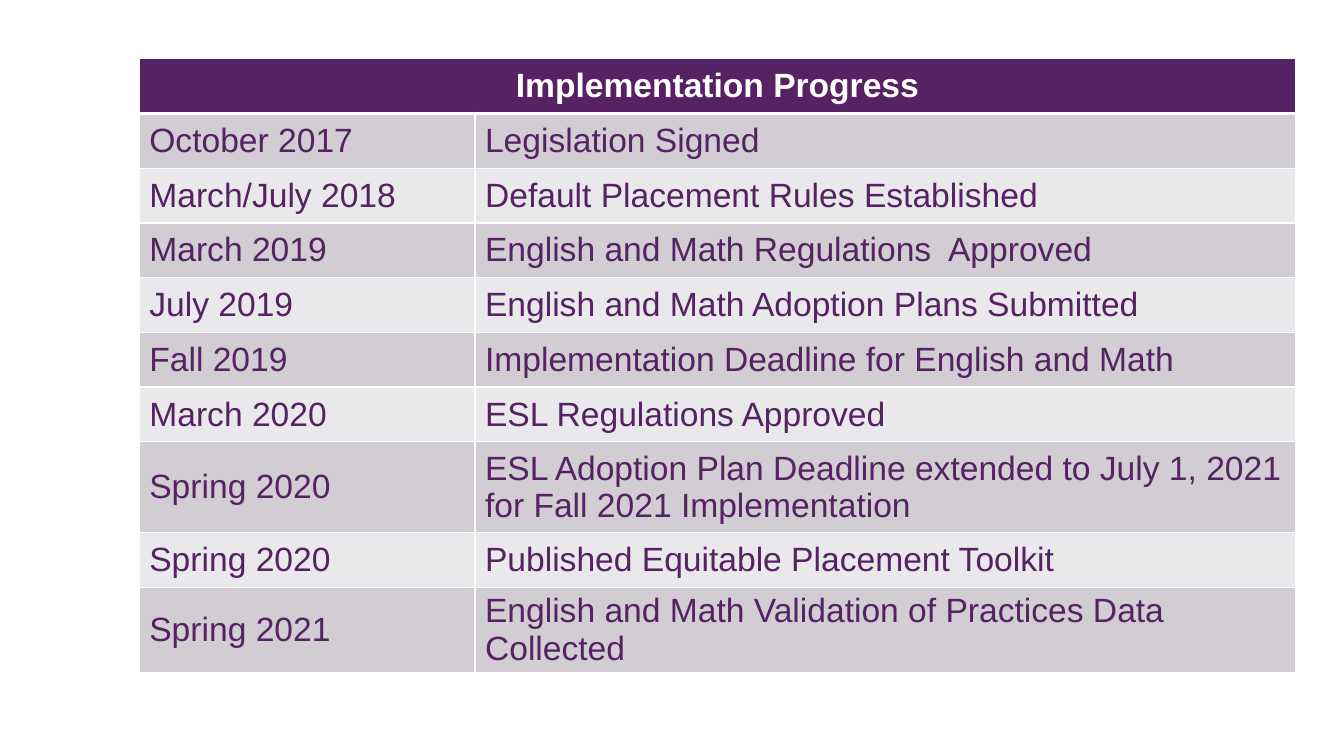
from dataclasses import dataclass

from lxml.etree import SubElement
from pptx import Presentation
from pptx.dml.color import RGBColor as RGB
from pptx.enum.text import MSO_ANCHOR as Anchor, PP_ALIGN as Align
from pptx.oxml.ns import qn
from pptx.util import Cm, Pt

# Content
HEADING = "Implementation Progress"
MILESTONES = [
    ("October 2017", "Legislation Signed"),
    ("March/July 2018", "Default Placement Rules Established"),
    ("March 2019", "English and Math Regulations  Approved"),
    ("July 2019", "English and Math Adoption Plans Submitted"),
    ("Fall 2019", "Implementation Deadline for English and Math"),
    ("March 2020", "ESL Regulations Approved"),
    ("Spring 2020", "ESL Adoption Plan Deadline extended to July 1, 2021 "
                    "for Fall 2021 Implementation"),
    ("Spring 2020", "Published Equitable Placement Toolkit"),
    ("Spring 2021", "English and Math Validation of Practices Data Collected"),
]


@dataclass(frozen=True)
class Theme:
    font: str = "Arial"
    size: int = 24
    purple: str = "562263"
    white: str = "FFFFFF"
    bands: tuple = ("D1CDD3", "E9E8EA")
    rule: int = 1
    header_rule: int = 3


THEME = Theme()

# Layout in centimetres
LEFT, TOP = 3.51, 1.48
COL_WIDTHS = (8.46, 20.68)
ROW_HEIGHT = 1.38
TALL_ROWS = {7: 2.29, 9: 2.14}


def set_borders(cell, bottom, top):
    """Draw white rules on the four sides of a cell."""
    tcPr = cell._tc.get_or_add_tcPr()
    widths = {"lnL": THEME.rule, "lnR": THEME.rule, "lnT": top, "lnB": bottom}
    for side, width in widths.items():
        ln = SubElement(tcPr, qn(f"a:{side}"), w=str(Pt(width)))
        fill = SubElement(ln, qn("a:solidFill"))
        SubElement(fill, qn("a:srgbClr"), val=THEME.white)


def format_cell(cell, text, row):
    """Write one cell in the header or band style of its row."""
    header = row == 0
    set_borders(cell,
                bottom=THEME.header_rule if header else THEME.rule,
                top=THEME.header_rule if row == 1 else THEME.rule)
    fill = THEME.purple if header else THEME.bands[(row - 1) % 2]
    cell.fill.solid()
    cell.fill.fore_color.rgb = RGB.from_string(fill)
    cell.vertical_anchor = Anchor.MIDDLE
    p = cell.text_frame.paragraphs[0]
    p.alignment = Align.CENTER if header else Align.LEFT
    r = p.add_run()
    r.text = text
    for name, value in {"name": THEME.font, "size": Pt(THEME.size), "bold": header}.items():
        setattr(r.font, name, value)
    r.font.color.rgb = RGB.from_string(THEME.white if header else THEME.purple)


def main():
    prs = Presentation()
    prs.slide_width, prs.slide_height = Cm(33.87), Cm(19.05)
    s = prs.slides.add_slide(prs.slide_layouts[6])

    # Table frame
    rows = [(HEADING, "")] + MILESTONES
    heights = [TALL_ROWS.get(i, ROW_HEIGHT) for i in range(len(rows))]
    table = s.shapes.add_table(len(rows), len(COL_WIDTHS), Cm(LEFT), Cm(TOP),
                               Cm(sum(COL_WIDTHS)), Cm(sum(heights))).table
    for col, width in zip(table.columns, COL_WIDTHS):
        col.width = Cm(width)
    for row, height in zip(table.rows, heights):
        row.height = Cm(height)

    # Heading and milestones
    table.cell(0, 0).merge(table.cell(0, 1))
    for i, texts in enumerate(rows):
        for j, text in enumerate(texts):
            format_cell(table.cell(i, j), text, i)

    prs.save("out.pptx")


if __name__ == "__main__":
    main()
